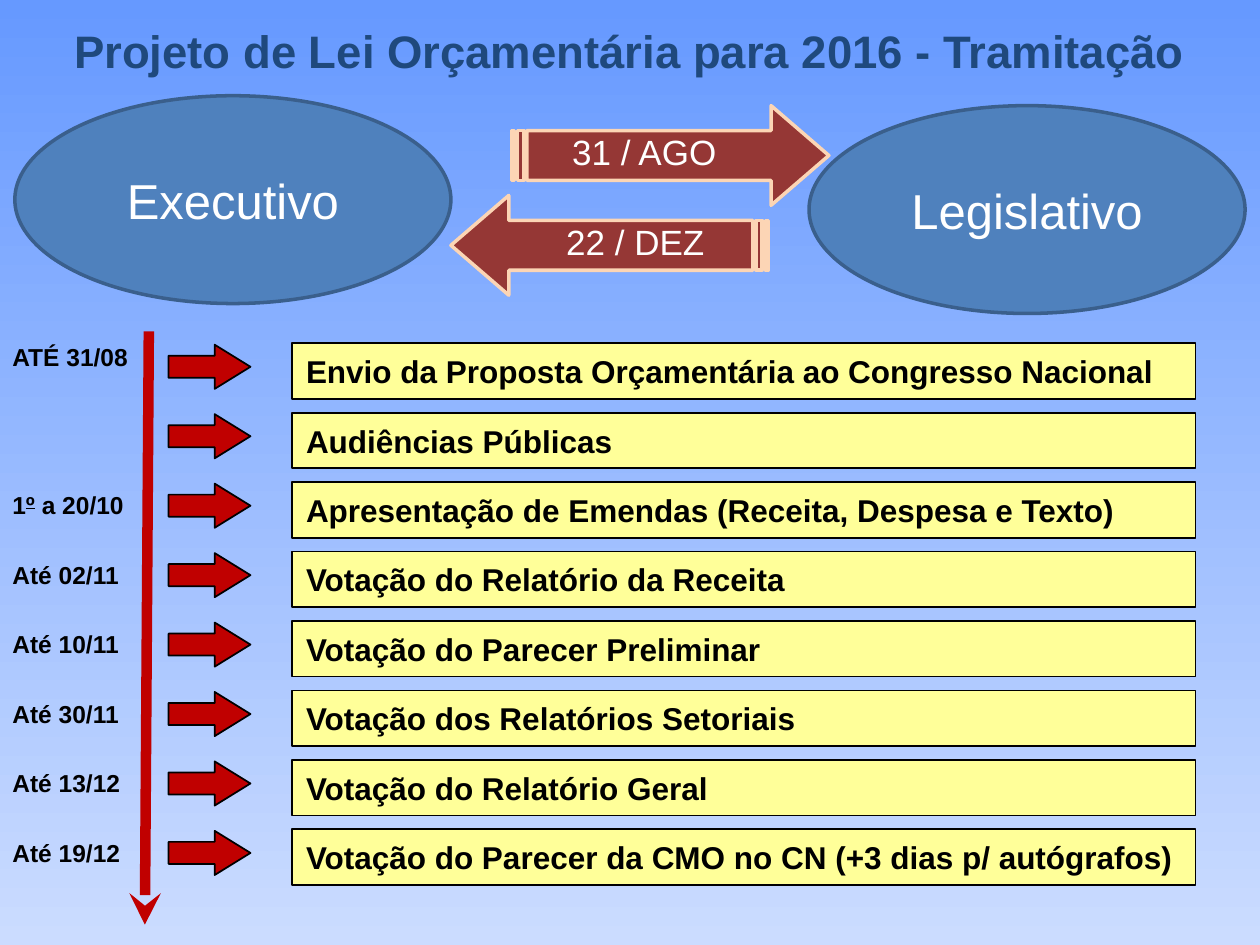
from lxml.etree import SubElement
from pptx import Presentation
from pptx.dml.color import RGBColor
from pptx.enum.shapes import MSO_CONNECTOR, MSO_SHAPE
from pptx.enum.text import MSO_ANCHOR, PP_ALIGN
from pptx.oxml.ns import qn
from pptx.util import Cm, Pt

COLORS = {
    "sky": "6699FF", "pale_sky": "CBDCFF", "title": "1F497D",
    "black": "000000", "white": "FFFFFF", "red": "C00000",
    "yellow": "FFFF99", "brick": "953735", "peach": "FCD5B5",
    "blue": "4F81BD", "dark_blue": "3A5F8C",
}
STEPS = [
    ("ATÉ 31/08", "Envio da Proposta Orçamentária ao Congresso Nacional"),
    (None, "Audiências Públicas"),
    ("1º a 20/10", "Apresentação de Emendas (Receita, Despesa e Texto)"),
    ("Até 02/11", "Votação do Relatório da Receita"),
    ("Até 10/11", "Votação do Parecer Preliminar"),
    ("Até 30/11", "Votação dos Relatórios Setoriais"),
    ("Até 13/12", "Votação do Relatório Geral"),
    ("Até 19/12", "Votação do Parecer da CMO no CN (+3 dias p/ autógrafos)"),
]
ROW_TOP, ROW_PITCH = 6.92, 1.4


def rgb(name):
    return RGBColor.from_string(COLORS[name])


def add_text(text, box, shape=None, size=14, color="black", bold=False,
             align=PP_ALIGN.LEFT, anchor=MSO_ANCHOR.TOP, struck=None):
    """Write text into shape, or into a new text box; box is in cm."""
    sp = shape or s.shapes.add_textbox(*map(Cm, box))
    tf = sp.text_frame
    tf.word_wrap = True
    tf.vertical_anchor = anchor
    p = tf.paragraphs[0]
    p.alignment = align
    before, mark, after = text.partition(struck) if struck else (text, "", "")
    for part in filter(None, (before, mark, after)):
        r = p.add_run()
        r.text = part
        r.font.name = "Arial"
        r.font.size = Pt(size)
        r.font.bold = bold
        r.font.color.rgb = rgb(color)
        if part == struck:
            r.font._element.set("strike", "sngStrike")
    return sp


def add_filled(kind, box, fill, line, width=1, adjustments=()):
    sp = s.shapes.add_shape(kind, *map(Cm, box))
    sp.shadow.inherit = False
    sp.fill.solid()
    sp.fill.fore_color.rgb = rgb(fill)
    sp.line.color.rgb = rgb(line)
    sp.line.width = Pt(width)
    for i, value in enumerate(adjustments):
        sp.adjustments[i] = value
    return sp


prs = Presentation()
prs.slide_width, prs.slide_height = Cm(25.4), Cm(19.05)
s = prs.slides.add_slide(prs.slide_layouts[6])

bg = s.background.fill
bg.gradient()
bg.gradient_angle = 270
for stop, name in zip(bg.gradient_stops, ("sky", "pale_sky")):
    stop.color.rgb = rgb(name)

# Timeline
timeline = s.shapes.add_connector(
    MSO_CONNECTOR.STRAIGHT, Cm(2.92), Cm(18.64), Cm(3), Cm(6.68))
timeline.line.color.rgb = rgb("red")
timeline.line.width = Pt(6)
SubElement(timeline.line._get_or_add_ln(), qn("a:headEnd"), type="stealth")
SubElement(timeline._element.spPr, qn("a:effectLst"))

# Steps: date, arrow and description
for i, (date, description) in enumerate(STEPS):
    top = ROW_TOP + i * ROW_PITCH
    if date:
        date_top = top + (0.04 if i else -0.14)
        add_text(date, (0, date_top, 3.18, 0.86), bold=True, struck="º")
    add_filled(MSO_SHAPE.RIGHT_ARROW, (3.4, top + 0.03, 1.65, 0.89),
               "red", "black", adjustments=(0.5, 0.81))
    box = (5.89, top, 18.21, 1.12)
    bar = add_filled(MSO_SHAPE.RECTANGLE, box, "yellow", "black")
    bar.text_frame.margin_left = Cm(0.28)
    bar.text_frame.margin_right = 0
    add_text(description, box, bar, size=18, bold=True,
             anchor=MSO_ANCHOR.MIDDLE)

add_text("Projeto de Lei Orçamentária para 2016 - Tramitação",
         (0, 0.33, 25.4, 1.37), size=26, color="title", bold=True,
         align=PP_ALIGN.CENTER)

# Exchange between the two branches
for label, left, top, rotation, text_left, text_top in (
        ("31 / AGO", 10.31, 2.13, 0, 10.49, 2.51),
        ("22 / DEZ", 9.09, 3.94, 180, 10.31, 4.32)):
    arrow = add_filled(MSO_SHAPE.STRIPED_RIGHT_ARROW, (left, top, 6.4, 2.01),
                       "brick", "peach", 2, (0.5, 0.58))
    arrow.rotation = rotation
    add_text(label, (text_left, text_top, 5, 1.12), size=20, color="white",
             align=PP_ALIGN.CENTER)

for branch, left, top in (("Legislativo", 16.31, 2.13),
                          ("Executivo", 0.3, 1.93)):
    box = (left, top, 8.79, 4.19)
    oval = add_filled(MSO_SHAPE.OVAL, box, "blue", "dark_blue", 2)
    add_text(branch, box, oval, size=28, color="white",
             align=PP_ALIGN.CENTER, anchor=MSO_ANCHOR.MIDDLE)

prs.save("out.pptx")
